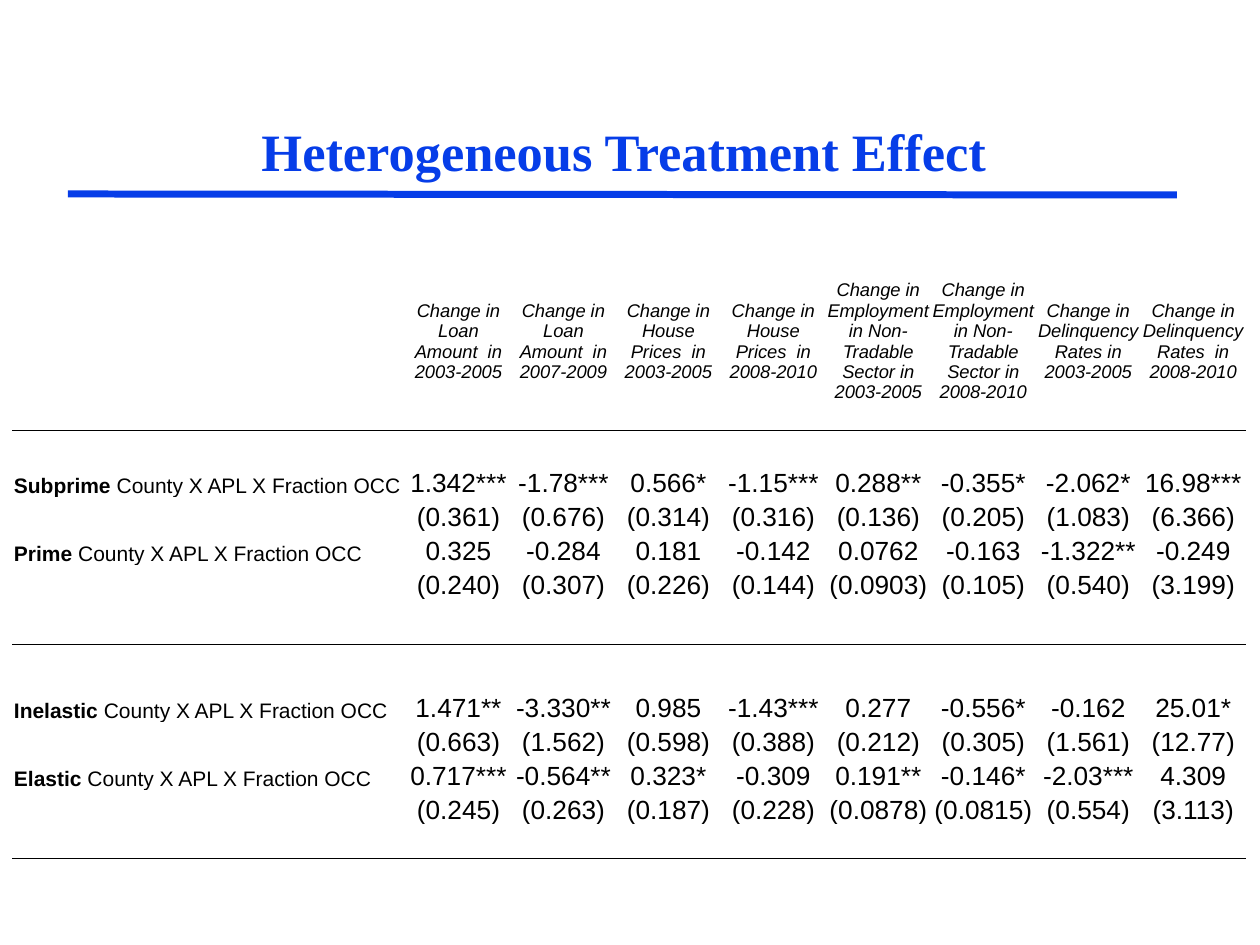
from lxml import etree
from pptx import Presentation
from pptx.dml.color import RGBColor
from pptx.enum.shapes import MSO_CONNECTOR
from pptx.enum.text import MSO_ANCHOR, PP_ALIGN
from pptx.oxml.ns import qn
from pptx.util import Emu, Pt

CENTER, LEFT = PP_ALIGN.CENTER, PP_ALIGN.LEFT
MIDDLE, BOTTOM = MSO_ANCHOR.MIDDLE, MSO_ANCHOR.BOTTOM
BLUE, BLACK = "063DE8", "000000"

# Content
TITLE = "Heterogeneous Treatment Effect"
HEADERS = [
    "Change in Loan Amount  in 2003-2005",
    "Change in Loan Amount  in 2007-2009",
    "Change in House Prices  in 2003-2005",
    "Change in House Prices  in 2008-2010",
    "Change in Employment in Non-Tradable Sector in 2003-2005",
    "Change in Employment in Non-Tradable Sector in 2008-2010",
    "Change in Delinquency Rates in 2003-2005",
    "Change in Delinquency Rates  in 2008-2010",
]
LABEL_REST = " County X APL X Fraction OCC"
# First table row of each pair -> county type, estimates, standard errors
RESULTS = {
    3: ("Subprime",
        ["1.342***", "-1.78***", "0.566*", "-1.15***", "0.288**", "-0.355*", "-2.062*", "16.98***"],
        ["(0.361)", "(0.676)", "(0.314)", "(0.316)", "(0.136)", "(0.205)", "(1.083)", "(6.366)"]),
    5: ("Prime",
        ["0.325", "-0.284", "0.181", "-0.142", "0.0762", "-0.163", "-1.322**", "-0.249"],
        ["(0.240)", "(0.307)", "(0.226)", "(0.144)", "(0.0903)", "(0.105)", "(0.540)", "(3.199)"]),
    9: ("Inelastic",
        ["1.471**", "-3.330**", "0.985", "-1.43***", "0.277", "-0.556*", "-0.162", "25.01*"],
        ["(0.663)", "(1.562)", "(0.598)", "(0.388)", "(0.212)", "(0.305)", "(1.561)", "(12.77)"]),
    11: ("Elastic",
         ["0.717***", "-0.564**", "0.323*", "-0.309", "0.191**", "-0.146*", "-2.03***", "4.309"],
         ["(0.245)", "(0.263)", "(0.187)", "(0.228)", "(0.0878)", "(0.0815)", "(0.554)", "(3.113)"]),
}

# Layout in px
COL_WIDTHS = [393] + [105] * len(HEADERS)
ROW_HEIGHTS = [34, 144] + [34] * 5 + [45, 44] + [34] * 5
RULED_ROWS = {1: "a:lnB", 2: "a:lnT", 7: "a:lnB", 8: "a:lnT", 13: "a:lnB"}


def px(n):
    return Emu(round(n * 914400 / 126))


def color(value):
    return RGBColor.from_string(value)


def add_run(p, text, size, bold=False, italic=False, font="Arial", fill=BLACK):
    r = p.add_run()
    r.text = text
    r.font.name, r.font.size = font, Pt(size)
    r.font.bold, r.font.italic = bold, italic
    r.font.color.rgb = color(fill)


def write_cell(cell, parts, size, anchor=BOTTOM, align=CENTER, italic=False):
    cell.vertical_anchor = anchor
    p = cell.text_frame.paragraphs[0]
    p.alignment = align
    for text, bold in parts:
        add_run(p, text, size, bold, italic)


def rule_cell(cell, side):
    tcPr = cell._tc.get_or_add_tcPr()
    ln = etree.Element(qn(side), w=str(Pt(0.5)))
    fill = etree.SubElement(ln, qn("a:solidFill"))
    etree.SubElement(fill, qn("a:srgbClr"), val=BLACK)
    tcPr.insert(0, ln)


prs = Presentation()
prs.slide_width, prs.slide_height = px(1260), px(945)
s = prs.slides.add_slide(prs.slide_layouts[6])

# Title and the bar under it
bar = s.shapes.add_connector(MSO_CONNECTOR.STRAIGHT, px(68), px(194), px(1177), px(195))
bar.line.color.rgb = color(BLUE)
bar.line.width = Pt(4)
etree.SubElement(bar._element.spPr, qn("a:effectLst"))

tf = s.shapes.add_textbox(px(72), px(35), px(1104), px(153)).text_frame
tf.word_wrap = True
tf.vertical_anchor = BOTTOM
tf.paragraphs[0].alignment = CENTER
add_run(tf.paragraphs[0], TITLE, 30, bold=True, font="Times New Roman", fill=BLUE)

# Empty table grid
table = s.shapes.add_table(len(ROW_HEIGHTS), len(COL_WIDTHS), px(13), px(252),
                           px(sum(COL_WIDTHS)), px(sum(ROW_HEIGHTS))).table
table.first_row = table.horz_banding = False
for col, width in zip(table.columns, COL_WIDTHS):
    col.width = px(width)
for i, (row, height) in enumerate(zip(table.rows, ROW_HEIGHTS)):
    row.height = px(height)
    for cell in row.cells:
        cell.fill.background()
        cell.margin_left = cell.margin_right = cell.margin_top = px(1)
        cell.margin_bottom = 0
        cell.text_frame.paragraphs[0].font.size = Pt(12)
        if i in RULED_ROWS:
            rule_cell(cell, RULED_ROWS[i])

# Column headings span the first two rows
for j, text in enumerate(HEADERS, 1):
    head = table.cell(0, j)
    head.merge(table.cell(1, j))
    rule_cell(head, "a:lnB")
    write_cell(head, [(text, False)], 10.5, anchor=MIDDLE, italic=True)

# Estimates with standard errors below
for top, (county, estimates, errors) in RESULTS.items():
    write_cell(table.cell(top, 0), [(county, True), (LABEL_REST, False)], 12, align=LEFT)
    for i, values in enumerate((estimates, errors), top):
        for j, value in enumerate(values, 1):
            write_cell(table.cell(i, j), [(value, False)], 15)

prs.save("out.pptx")
